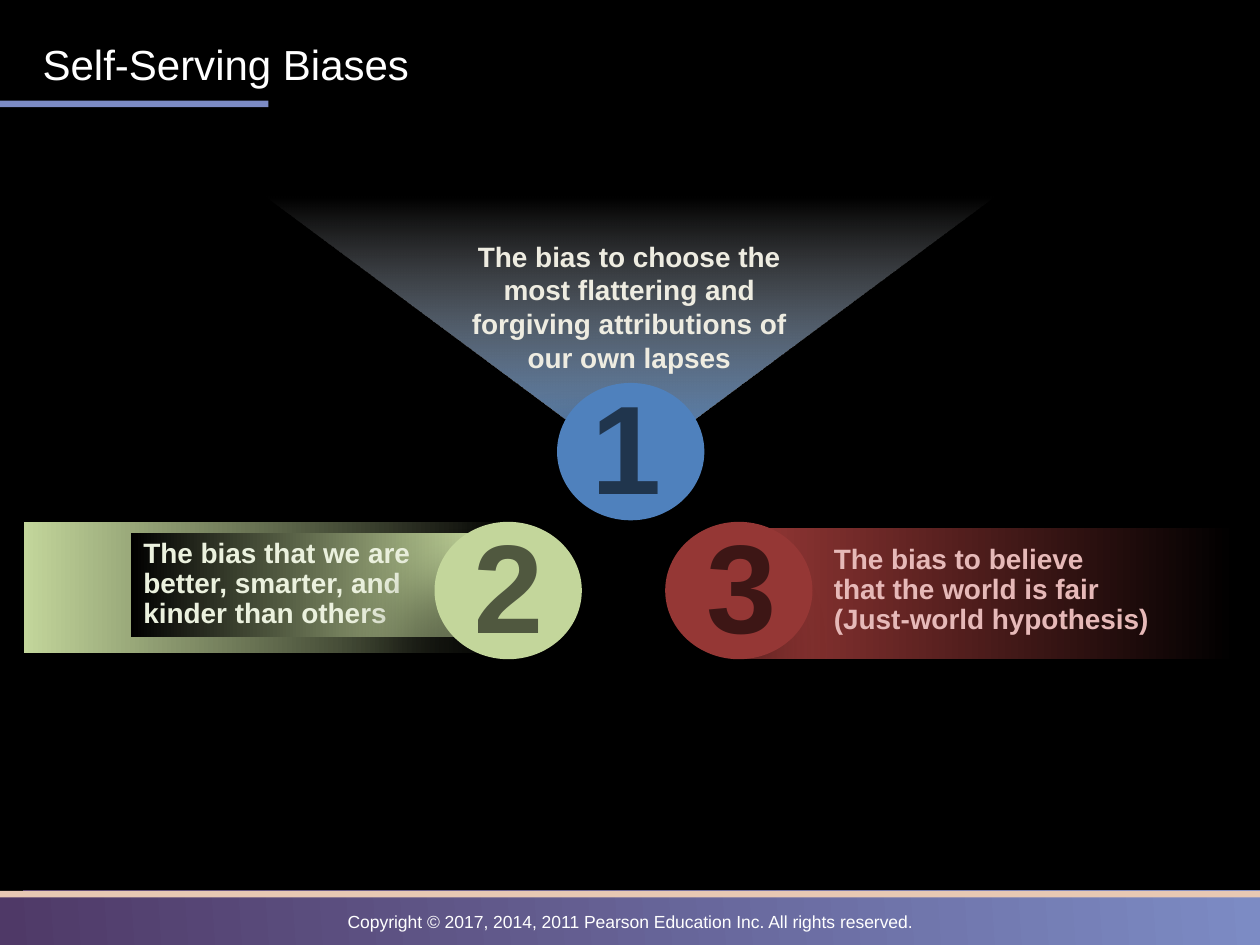
from lxml.etree import SubElement
from pptx import Presentation
from pptx.dml.color import RGBColor
from pptx.enum.shapes import MSO_SHAPE as Preset
from pptx.enum.text import MSO_ANCHOR as Anchor, PP_ALIGN as Align
from pptx.oxml.ns import qn
from pptx.util import Cm, Pt

COLORS = {
    "black": "000000", "white": "FFFFFF", "plum": "4F3967", "periwinkle": "7C8BC4",
    "peach": "E7C8B3", "blue": "4F81BD", "red": "953735", "green": "C3D69B",
    "cream": "EEECE1", "pink": "E6B9B8", "pale green": "EBF1DE",
}


def rgb(name):
    return RGBColor.from_string(COLORS[name])


def add_color(parent, name, alpha=100):
    color = SubElement(parent, qn("a:srgbClr"), val=COLORS[name])
    if alpha < 100:
        SubElement(color, qn("a:alpha"), val=str(alpha * 1000))


def add_panel(shapes, preset, box, color):
    panel = shapes.add_shape(preset, *map(Cm, box))
    panel.shadow.inherit = False
    panel.line.fill.background()
    panel.fill.solid()
    panel.fill.fore_color.rgb = rgb(color)
    return panel


def set_gradient(panel, start, end, angle=0, end_alpha=100):
    panel.fill.gradient()
    gradient = panel._element.spPr.find(qn("a:gradFill"))
    for child in list(gradient):
        gradient.remove(child)
    stops = SubElement(gradient, qn("a:gsLst"))
    for place, color, alpha in ((0, start, 100), (100, end, end_alpha)):
        stop = SubElement(stops, qn("a:gs"), pos=str(place * 1000))
        add_color(stop, color, alpha)
    SubElement(gradient, qn("a:lin"), ang=str(angle * 60000), scaled="0")


def add_shadow(panel):
    effects = panel._element.spPr.find(qn("a:effectLst"))
    shadow = SubElement(effects, qn("a:outerShdw"), blurRad=str(Pt(35.5)),
                        dist=str(Pt(41)), dir=str(124 * 60000), rotWithShape="0")
    add_color(shadow, "black", 43)


def write_text(holder, text, size=16, color="white", bold=False, align=Align.LEFT,
               anchor=Anchor.TOP, spacing=1.0, alpha=100):
    frame = holder.text_frame
    frame.word_wrap = True
    frame.vertical_anchor = anchor
    para = frame.paragraphs[0]
    para.text = text
    para.alignment = align
    para.line_spacing = spacing
    for span in para.runs:
        span.font.name = "Arial"
        span.font.size = Pt(size)
        span.font.bold = bold
        span.font.color.rgb = rgb(color)
        if alpha < 100:
            tint = span._r.rPr.find(qn("a:solidFill")).find(qn("a:srgbClr"))
            SubElement(tint, qn("a:alpha"), val=str(alpha * 1000))


def add_text(shapes, box, text, **style):
    write_text(shapes.add_textbox(*map(Cm, box)), text, **style)


def add_header(shapes, left, top):
    add_panel(shapes, Preset.RECTANGLE, (left, top + 1.5, 5.41, 0.13), "periwinkle")
    add_text(shapes, (left + 0.61, top, 21.59, 1.5), "Self-Serving Biases",
             size=24, anchor=Anchor.MIDDLE)


def add_footer(shapes, left, top, width, height):
    band = add_panel(shapes, Preset.RECTANGLE, (left, top, width, height), "plum")
    set_gradient(band, "plum", "periwinkle", 356)
    add_panel(shapes, Preset.RECTANGLE, (left, top, width, 0.13), "peach")
    add_text(shapes, (left, top + 0.28, width, 0.69),
             "Copyright © 2017, 2014, 2011 Pearson Education Inc. All rights reserved.",
             size=10, align=Align.CENTER)


def add_funnel(shapes, left, top, width, height):
    funnel = add_panel(shapes, Preset.ISOSCELES_TRIANGLE, (left, top, width, height), "blue")
    funnel._element.spPr.xfrm.set("flipV", "1")
    set_gradient(funnel, "blue", "white", 90, end_alpha=0)
    add_text(shapes, (left + 3.45, top + 0.74, 7.75, 2.74),
             "The bias to choose the most flattering and forgiving attributions of our own lapses",
             color="cream", bold=True, align=Align.CENTER)


def add_right_bar(shapes, left, top, width, height):
    group = shapes.add_group_shape().shapes
    bar = add_panel(group, Preset.RECTANGLE, (left, top, width, height), "red")
    set_gradient(bar, "red", "black")
    add_text(group, (left + 1.62, top + 0.23, 7.24, 2.11),
             "The bias to believe\vthat the world is fair\v(Just-world hypothesis)",
             color="pink", bold=True, spacing=0.9)


def add_left_bar(shapes, left, top, width, height):
    group = shapes.add_group_shape().shapes
    bar = add_panel(group, Preset.RECTANGLE, (left, top, width, height), "green")
    set_gradient(bar, "green", "black")
    label = add_panel(group, Preset.RECTANGLE, (left + 2.16, top + 0.22, 7.14, 2.11), "black")
    set_gradient(label, "black", "green")
    write_text(label, "The bias that we are better, smarter, and kinder than others",
               color="pale green", bold=True, spacing=0.9)


def add_badge(shapes, left, top, number, color, nudge):
    group = shapes.add_group_shape().shapes
    circle = add_panel(group, Preset.OVAL, (left, top, 2.97, 2.77), color)
    add_shadow(circle)
    add_text(group, (left + nudge, top - 0.42, 2.8, 3.33), number, size=72,
             color="black", bold=True, align=Align.CENTER, alpha=59)


def main():
    deck = Presentation()
    deck.slide_width, deck.slide_height = Cm(25.4), Cm(19.05)
    page = deck.slides.add_slide(deck.slide_layouts[6])
    page.background.fill.solid()
    page.background.fill.fore_color.rgb = rgb("black")
    shapes = page.shapes
    add_footer(shapes, 0, 17.96, 25.4, 1.09)
    add_header(shapes, 0, 0.53)
    add_funnel(shapes, 5.36, 3.96, 14.68, 5.44)
    add_right_bar(shapes, 14.94, 10.64, 9.96, 2.64)
    add_left_bar(shapes, 0.48, 10.52, 9.96, 2.64)
    add_badge(shapes, 11.23, 7.72, "1", "blue", 0)
    add_badge(shapes, 13.41, 10.52, "3", "red", 0.13)
    add_badge(shapes, 8.76, 10.52, "2", "green", 0.1)
    deck.save("out.pptx")


if __name__ == "__main__":
    main()
